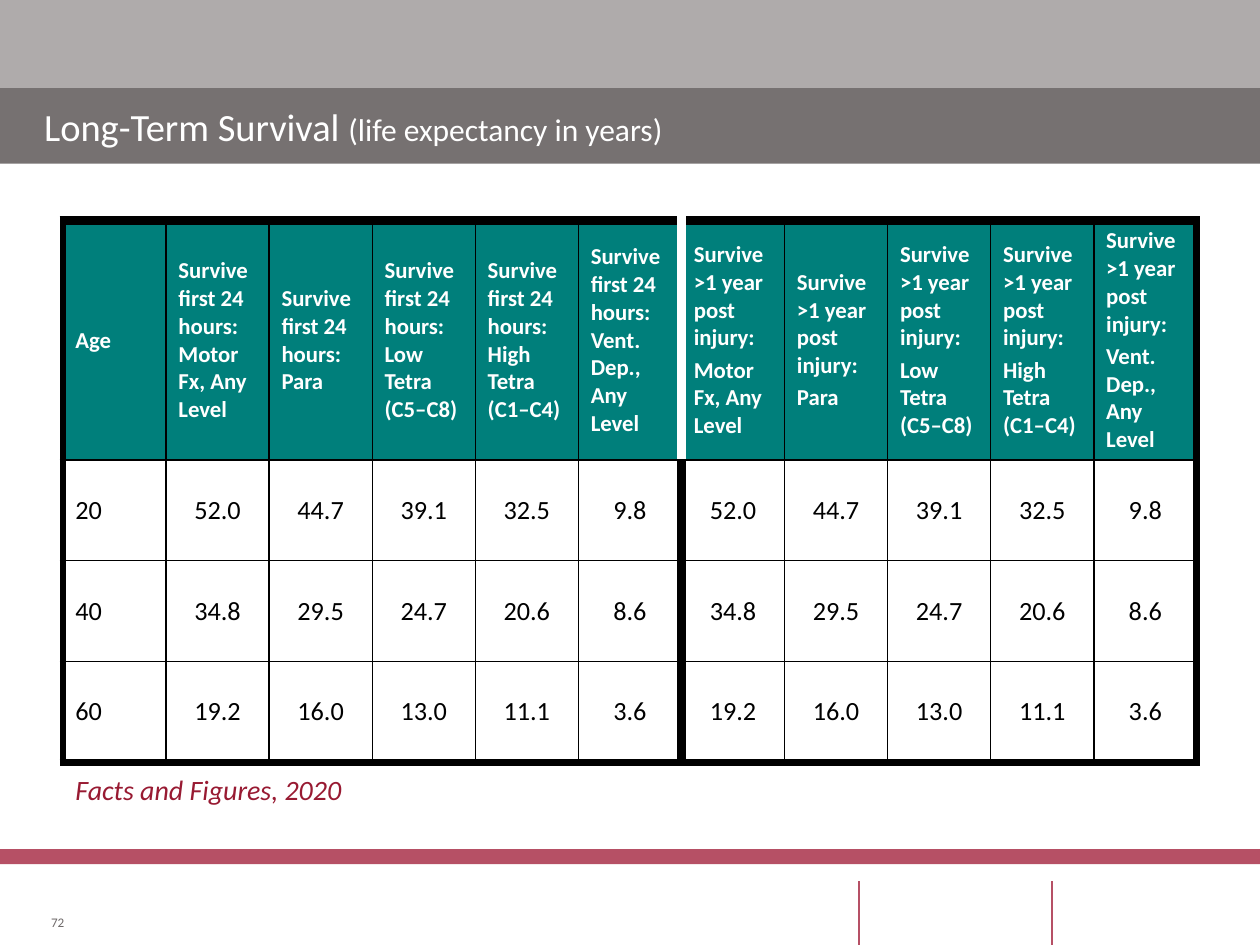
from dataclasses import dataclass

from lxml.etree import SubElement
from pptx import Presentation
from pptx.dml.color import RGBColor
from pptx.enum.shapes import MSO_CONNECTOR as Conn, MSO_SHAPE as Shape
from pptx.enum.text import MSO_ANCHOR as Anchor, MSO_AUTO_SIZE as AutoSize, PP_ALIGN as Align
from pptx.oxml.ns import qn
from pptx.util import Cm, Pt

LIGHT_GREY = RGBColor(0xAF, 0xAB, 0xAB)
DARK_GREY = RGBColor(0x76, 0x71, 0x71)
NUMBER_GREY = RGBColor(0x6F, 0x6A, 0x6A)
ROSE = RGBColor(0xB6, 0x50, 0x65)
CRIMSON = RGBColor(0x98, 0x1A, 0x32)
TEAL = RGBColor(0x00, 0x7F, 0x7B)
BLACK = RGBColor(0x00, 0x00, 0x00)
WHITE = RGBColor(0xFF, 0xFF, 0xFF)

WIDTH, HEIGHT = Cm(25.4), Cm(19.05)
THIN, OUTER, THICK = Pt(1), Pt(4.5), Pt(6)
GROUPS = [
    ["Survive first 24 hours:"],
    ["Survive >1 year post injury:"],
]
LEVELS = ["Motor Fx, Any Level", "Para", "Low Tetra (C5–C8)",
          "High Tetra (C1–C4)", "Vent. Dep., Any Level"]
SURVIVAL = {
    "20": ["52.0", "44.7", "39.1", "32.5", "9.8"],
    "40": ["34.8", "29.5", "24.7", "20.6", "8.6"],
    "60": ["19.2", "16.0", "13.0", "11.1", "3.6"],
}
FIRST_DAY, FIRST_YEAR = (group[0] for group in GROUPS)
HEADER = (["Age"] + [f"{FIRST_DAY} {level}" for level in LEVELS]
          + [f"{FIRST_YEAR}\n{level}" for level in LEVELS])
ROWS = [HEADER] + [[age] + years * 2 for age, years in SURVIVAL.items()]
LAST_ROW, LAST_COL = len(ROWS) - 1, len(HEADER) - 1
SPLIT_COL = len(LEVELS)


@dataclass
class Band:
    top: float
    height: float
    color: RGBColor


BANDS = [Band(0, 1.8, LIGHT_GREY), Band(1.78, 1.52, DARK_GREY), Band(17.12, 0.3, ROSE)]
FOOTER_RULES = [17.32, 21.21]


def set_all(obj, values: dict) -> None:
    for name, value in values.items():
        setattr(obj, name, value)


def insets(horizontal: float, vertical: float) -> dict:
    return dict(margin_left=Cm(horizontal), margin_right=Cm(horizontal),
                margin_top=Cm(vertical), margin_bottom=Cm(vertical))


def add_run(p, text: str, size: float, color: RGBColor, **fmt) -> None:
    r = p.add_run()
    r.text = text
    set_all(r.font, dict(name="Calibri", size=Pt(size), **fmt))
    r.font.color.rgb = color


def add_band(s, band: Band) -> None:
    sp = s.shapes.add_shape(Shape.RECTANGLE, 0, Cm(band.top), WIDTH, Cm(band.height))
    sp.shadow.inherit = False
    sp.fill.solid()
    sp.fill.fore_color.rgb = band.color
    sp.line.fill.background()


def add_footer_rule(s, x: float) -> None:
    rule = s.shapes.add_connector(Conn.STRAIGHT, Cm(x), Cm(17.76), Cm(x), HEIGHT)
    rule.line.color.rgb = ROSE
    rule.line.width = Pt(1.5)
    SubElement(rule._element.spPr, qn("a:effectLst"))


def add_title(s) -> None:
    title = s.shapes.title
    set_all(title, dict(left=0, top=Cm(1.78), width=WIDTH, height=Cm(1.52)))
    s.shapes._spTree.append(title._element)
    tf = title.text_frame
    set_all(tf, dict(vertical_anchor=Anchor.MIDDLE, word_wrap=True, **insets(0.89, 0)))
    p = tf.paragraphs[0]
    p.alignment = Align.LEFT
    add_run(p, "Long-Term Survival ", 22, WHITE)
    add_run(p, "(life expectancy in years)", 18, WHITE)


def set_border(cell, side: str, color: RGBColor, width: int) -> None:
    ln = SubElement(cell._tc.get_or_add_tcPr(), qn(f"a:ln{side}"), w=str(int(width)))
    fill = SubElement(ln, qn("a:solidFill"))
    SubElement(fill, qn("a:srgbClr"), val=str(color))


def format_borders(cell, row: int, col: int) -> None:
    divider = WHITE if row == 0 else BLACK
    left = {0: (BLACK, OUTER), SPLIT_COL + 1: (divider, THICK)}.get(col, (BLACK, THIN))
    right = {LAST_COL: (BLACK, OUTER), SPLIT_COL: (divider, THICK)}.get(col, (BLACK, THIN))
    top = (BLACK, THICK if row == 0 else THIN)
    bottom = (BLACK, OUTER if row == LAST_ROW else THIN)
    for side, (color, width) in zip("LRTB", (left, right, top, bottom)):
        set_border(cell, side, color, width)


def fill_cell(cell, text: str, row: int, col: int) -> None:
    is_header, is_value = row == 0, row > 0 and col > 0
    format_borders(cell, row, col)
    margins = insets(0, 0) if is_value else insets(0.25, 0.13)
    set_all(cell, dict(vertical_anchor=Anchor.MIDDLE, **margins))
    if is_header:
        cell.fill.solid()
        cell.fill.fore_color.rgb = TEAL
    else:
        cell.fill.background()
    tf = cell.text_frame
    for i, line in enumerate(text.split("\n")):
        p = tf.add_paragraph() if i else tf.paragraphs[0]
        p.alignment = Align.CENTER if is_value else Align.LEFT
        if i:
            p.space_before = Pt(2.6)
        add_run(p, line, 13 if is_header else 15, WHITE if is_header else BLACK, bold=is_header)


def add_survival_table(s) -> None:
    frame = s.shapes.add_table(len(ROWS), len(HEADER), Cm(1.27), Cm(4.45), Cm(22.86), Cm(10.87))
    table = frame.table
    set_all(table, dict(first_row=False, horz_banding=False))
    for i, row in enumerate(table.rows):
        row.height = Cm(2.03 if i else 2.62)
    frame.height = Cm(10.87)
    for i, texts in enumerate(ROWS):
        for j, text in enumerate(texts):
            fill_cell(table.cell(i, j), text, i, j)


def add_source(s) -> None:
    tf = s.shapes.add_textbox(Cm(1.27), Cm(15.44), Cm(22.86), Cm(1.27)).text_frame
    tf.word_wrap = True
    p = tf.paragraphs[0]
    set_all(p._p.get_or_add_pPr(), dict(marL=Cm(15.24), indent=0))
    add_run(p, "Facts and Figures, 2020", 16, CRIMSON, italic=True)


def add_slide_number(s) -> None:
    tf = s.shapes.add_textbox(Cm(0.97), Cm(18.42), Cm(0.33), Cm(0.33)).text_frame
    set_all(tf, dict(word_wrap=False, auto_size=AutoSize.SHAPE_TO_FIT_TEXT,
                     vertical_anchor=Anchor.BOTTOM, **insets(0, 0)))
    p = tf.paragraphs[0]
    p.alignment = Align.RIGHT
    add_run(p, "72", 7.5, NUMBER_GREY)


def main() -> None:
    prs = Presentation()
    set_all(prs, dict(slide_width=WIDTH, slide_height=HEIGHT))
    s = prs.slides.add_slide(prs.slide_layouts[5])
    for band in BANDS:
        add_band(s, band)
    for x in FOOTER_RULES:
        add_footer_rule(s, x)
    add_title(s)
    add_survival_table(s)
    add_source(s)
    add_slide_number(s)
    prs.save("out.pptx")


if __name__ == "__main__":
    main()
